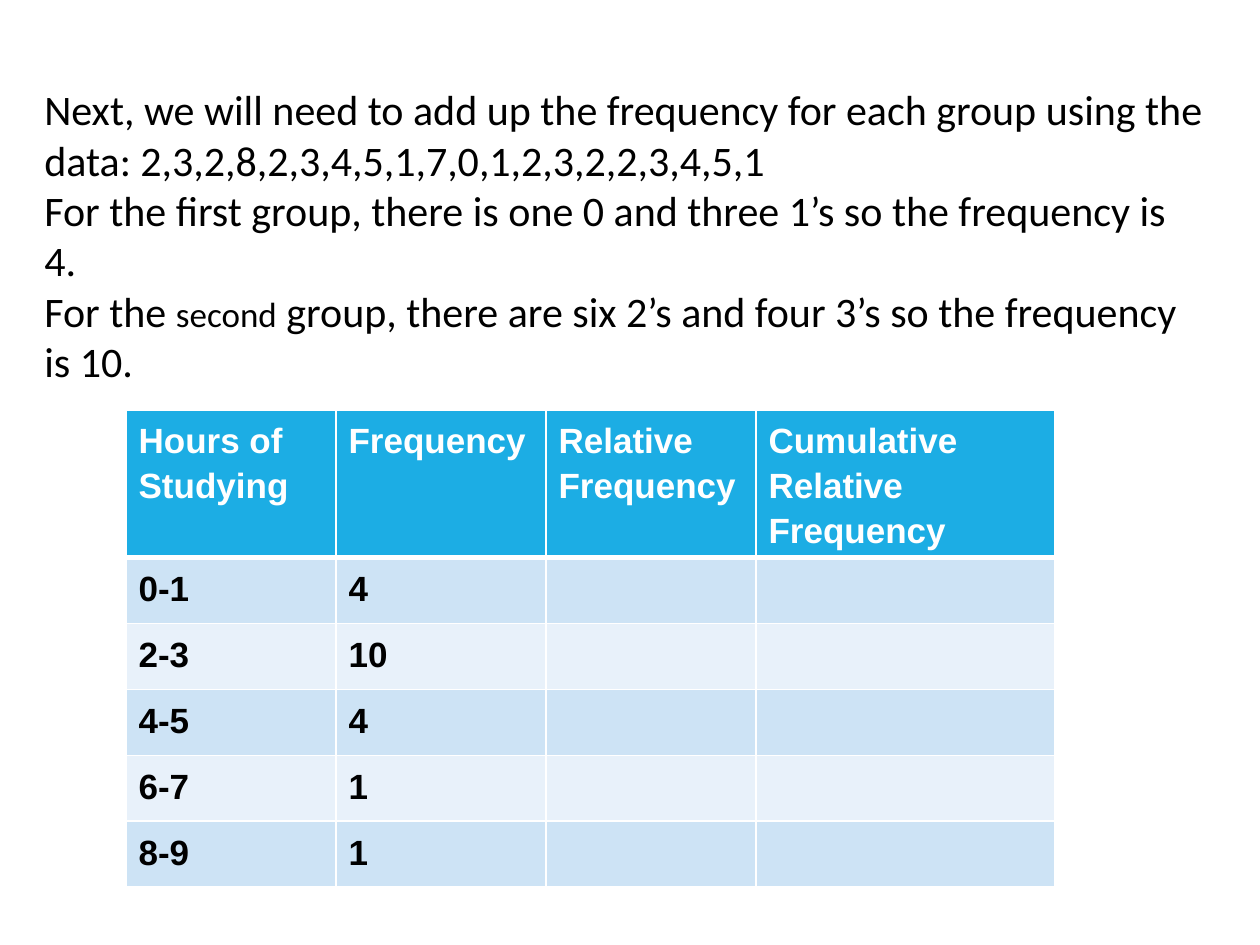
from typing import NamedTuple

from lxml.etree import SubElement
from pptx import Presentation
from pptx.dml.color import RGBColor
from pptx.enum.text import MSO_ANCHOR
from pptx.oxml.ns import qn
from pptx.slide import Slide
from pptx.table import _Cell as Cell
from pptx.util import Emu, Pt

SCALE = 914400 / 126
WHITE = RGBColor(0xFF, 0xFF, 0xFF)
BLACK = RGBColor(0x00, 0x00, 0x00)
BLUE = RGBColor(0x1C, 0xAD, 0xE4)
BANDS = (RGBColor(0xE8, 0xF1, 0xFA), RGBColor(0xCD, 0xE3, 0xF5))


class Box(NamedTuple):
    left: int
    top: int
    width: int
    height: int


class Look(NamedTuple):
    fill: RGBColor
    ink: RGBColor
    upper: int
    lower: int


class Run(NamedTuple):
    text: str
    size: int = 24


NOTE = Box(32, 76, 1187, 318)
GRID = Box(126, 410, 929, 476)
COLS = (210, 210, 210, 299)
HEAD, ROW = 146, 66
TABLE = (
    ("Hours of Studying", "Frequency", "Relative Frequency", "Cumulative Relative Frequency"),
    ("0-1", "4", "", ""),
    ("2-3", "10", "", ""),
    ("4-5", "4", "", ""),
    ("6-7", "1", "", ""),
    ("8-9", "1", "", ""),
)
LINES = (
    (Run("Next, we will need to add up the frequency for each group using the data: "
         "2,3,2,8,2,3,4,5,1,7,0,1,2,3,2,2,3,4,5,1"),),
    (Run("For the first group, there is one 0 and three 1’s so the frequency is 4."),),
    (Run("For the "), Run("second", 20),
     Run(" group, there are six 2’s and four 3’s so the frequency is 10.")),
)


def px(count: int) -> Emu:
    """Turn pixels into EMU."""
    return Emu(round(count * SCALE))


def place(box: Box) -> tuple[Emu, ...]:
    """Turn a box into EMU lengths."""
    return tuple(px(side) for side in box)


def add_note(slide: Slide) -> None:
    """Write the text above the table."""
    frame = slide.shapes.add_textbox(*place(NOTE)).text_frame
    frame.word_wrap = True
    frame.vertical_anchor = MSO_ANCHOR.MIDDLE
    for index, line in enumerate(LINES):
        para = frame.add_paragraph() if index else frame.paragraphs[0]
        para.font.name = "Calibri"
        para.font.size = Pt(24)
        para.font.color.rgb = BLACK
        for part in line:
            run = para.add_run()
            run.text = part.text
            run.font.size = Pt(part.size)


def add_edge(cell: Cell, side: str, width: int) -> None:
    """Draw one white border of a cell."""
    edge = SubElement(cell._tc.get_or_add_tcPr(), qn(f"a:{side}"), w=str(Pt(width)))
    fill = SubElement(edge, qn("a:solidFill"))
    SubElement(fill, qn("a:srgbClr"), val=str(WHITE))


def fill_cell(cell: Cell, text: str, look: Look) -> None:
    """Fill one cell with its text, borders and colour."""
    edges = {"lnL": 1, "lnR": 1, "lnT": look.upper, "lnB": look.lower}
    for side, width in edges.items():
        add_edge(cell, side, width)
    cell.fill.solid()
    cell.fill.fore_color.rgb = look.fill
    if not text:
        return
    cell.text = text
    para = cell.text_frame.paragraphs[0]
    para.line_spacing = 1.15
    para.space_after = Pt(10)
    para.font.name = "Arial"
    para.font.size = Pt(20)
    para.font.bold = True
    para.font.color.rgb = look.ink


def add_grid(slide: Slide) -> None:
    """Build the frequency table."""
    table = slide.shapes.add_table(len(TABLE), len(COLS), *place(GRID)).table
    for col, width in zip(table.columns, COLS):
        col.width = px(width)
    for index, texts in enumerate(TABLE):
        table.rows[index].height = px(ROW if index else HEAD)
        if index:
            look = Look(BANDS[index % 2], BLACK, 3 if index == 1 else 1, 1)
        else:
            look = Look(BLUE, WHITE, 1, 3)
        for col, text in enumerate(texts):
            fill_cell(table.cell(index, col), text, look)


def main() -> None:
    """Build and save the slide."""
    deck = Presentation()
    deck.slide_width, deck.slide_height = px(1260), px(945)
    slide = deck.slides.add_slide(deck.slide_layouts[6])
    add_grid(slide)
    add_note(slide)
    deck.save("out.pptx")


if __name__ == "__main__":
    main()
